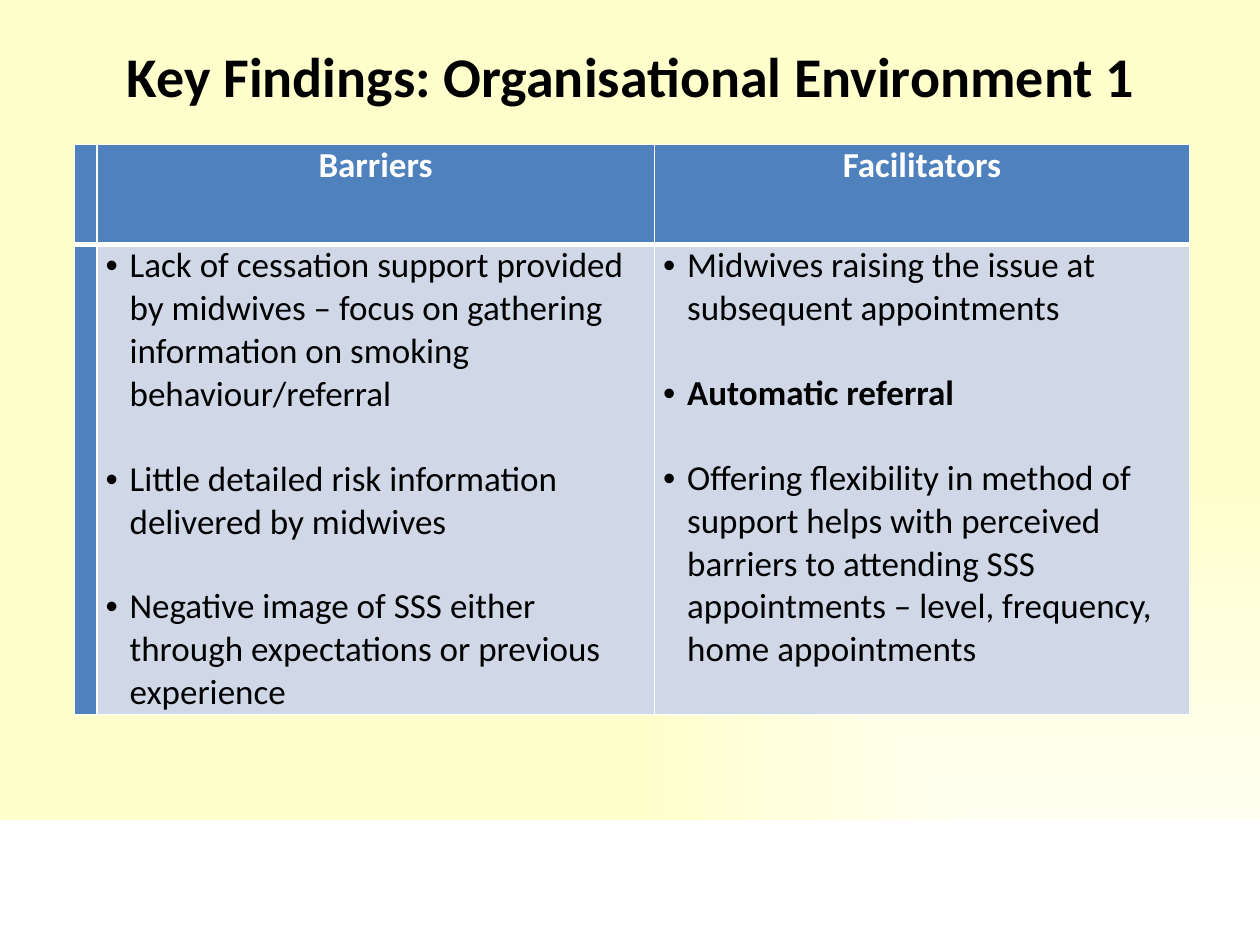
import lxml.etree
import pptx
import pptx.dml.color
import pptx.enum.text
import pptx.oxml
import pptx.oxml.ns
import pptx.util

RGB = pptx.dml.color.RGBColor
BLACK = RGB(0x00, 0x00, 0x00)
WHITE = RGB(0xFF, 0xFF, 0xFF)
CREAM = RGB(0xFF, 0xFF, 0xCC)
BLUE = RGB(0x4F, 0x81, 0xBD)
PALE_BLUE = RGB(0xD0, 0xD8, 0xE8)

WIDTH, HEIGHT = pptx.util.Inches(10), pptx.util.Inches(7.5)
CENTER = pptx.enum.text.PP_ALIGN.CENTER
NS = pptx.oxml.ns.nsdecls("a", "p")

TITLE_FONT = {"name": "Calibri", "size": pptx.util.Pt(32), "bold": True}
HEAD_FONT = {"name": "Calibri", "size": pptx.util.Pt(20), "bold": True}
BODY_FONT = {"name": "Calibri", "size": pptx.util.Pt(20), "bold": False}
BULLET = {"marL": pptx.util.Inches(0.19), "indent": -pptx.util.Inches(0.19)}
MARGINS = {
    "margin_left": pptx.util.Inches(0.07),
    "margin_right": pptx.util.Inches(0.07),
    "margin_top": 0,
    "margin_bottom": 0,
}

TITLE = "Key Findings: Organisational Environment 1"
COLUMN_SHARES = [0.02, 0.5, 0.48]
ROW_SHARES = [0.175, 0.825]
EMPHASIS = "Automatic referral"
FINDINGS = {
    "Barriers": [
        "Lack of cessation support provided by midwives – focus on gathering "
        "information on smoking behaviour/referral",
        "Little detailed risk information delivered by midwives",
        "Negative image of SSS either through expectations or previous experience",
    ],
    "Facilitators": [
        "Midwives raising the issue at subsequent appointments",
        EMPHASIS,
        "Offering flexibility in method of support helps with perceived barriers "
        "to attending SSS appointments – level, frequency, home appointments",
    ],
}


def share(left, top, width, height):
    return (int(left * WIDTH), int(top * HEIGHT), int(width * WIDTH), int(height * HEIGHT))


def apply(target, values):
    for name, value in values.items():
        setattr(target, name, value)


def write(p, text, font, color):
    r = p.add_run()
    r.text = text
    apply(r.font, font)
    r.font.color.rgb = color


def paint_background(s):
    c_sld = s.background.fill and s._element.cSld
    old = c_sld.find(pptx.oxml.ns.qn("p:bg"))
    if old is not None:
        c_sld.remove(old)
    c_sld.insert(0, pptx.oxml.parse_xml(
        f'<p:bg {NS}><p:bgPr><a:gradFill rotWithShape="0"><a:gsLst>'
        f'<a:gs pos="0"><a:srgbClr val="{WHITE}"/></a:gs>'
        f'<a:gs pos="100000"><a:srgbClr val="{CREAM}"/></a:gs></a:gsLst>'
        '<a:path path="rect"><a:fillToRect l="100000" t="100000"/></a:path>'
        '</a:gradFill><a:effectLst/></p:bgPr></p:bg>'))


def add_footer_band(s, box):
    sp = s.shapes.add_shape(pptx.enum.shapes.MSO_SHAPE.RECTANGLE, *box)
    sp.shadow.inherit = False
    sp.fill.solid()
    sp.fill.fore_color.rgb = WHITE
    sp.line.fill.background()


def add_title(s, box):
    tf = s.shapes.add_textbox(*box).text_frame
    tf.word_wrap = True
    p = tf.paragraphs[0]
    p.alignment = CENTER
    write(p, TITLE, TITLE_FONT, BLACK)


def style_cell(cell, color, is_header):
    apply(cell, MARGINS)
    tc_pr = cell._tc.get_or_add_tcPr()
    edges = {"lnL": 1, "lnR": 1, "lnT": 1 if is_header else 3, "lnB": 3 if is_header else 1}
    for tag, points in edges.items():
        tc_pr.append(pptx.oxml.parse_xml(
            f'<a:{tag} {NS} w="{pptx.util.Pt(points)}"><a:solidFill>'
            f'<a:srgbClr val="{WHITE}"/></a:solidFill></a:{tag}>'))
    cell.fill.solid()
    cell.fill.fore_color.rgb = color


def write_bullets(tf, items):
    for i, item in enumerate(items):
        p = tf.add_paragraph() if i else tf.paragraphs[0]
        p_pr = p._p.get_or_add_pPr()
        for name, value in BULLET.items():
            p_pr.set(name, str(int(value)))
        lxml.etree.SubElement(p_pr, pptx.oxml.ns.qn("a:buFont")).set("typeface", "Arial")
        lxml.etree.SubElement(p_pr, pptx.oxml.ns.qn("a:buChar")).set("char", "•")
        if i:
            p.space_before = pptx.util.Pt(24)
        write(p, item, {**BODY_FONT, "bold": item == EMPHASIS}, BLACK)


def add_findings_table(s, box):
    table = s.shapes.add_table(len(ROW_SHARES), len(COLUMN_SHARES), *box).table
    for column, part in zip(table.columns, COLUMN_SHARES):
        column.width = int(box[2] * part)
    for row, part in zip(table.rows, ROW_SHARES):
        row.height = int(box[3] * part)
    for i, row in enumerate(table.rows):
        for j, cell in enumerate(row.cells):
            style_cell(cell, PALE_BLUE if i and j else BLUE, i == 0)
    for j, (heading, items) in enumerate(FINDINGS.items(), 1):
        p = table.cell(0, j).text_frame.paragraphs[0]
        p.alignment = CENTER
        write(p, heading, HEAD_FONT, WHITE)
        write_bullets(table.cell(1, j).text_frame, items)


def main():
    prs = pptx.Presentation()
    prs.slide_width, prs.slide_height = WIDTH, HEIGHT
    s = prs.slides.add_slide(prs.slide_layouts[6])
    paint_background(s)
    add_footer_band(s, share(0, 0.868, 1, 0.132))
    add_title(s, share(0.051, 0.037, 0.9, 0.755))
    add_findings_table(s, share(0.059, 0.153, 0.885, 0.603))
    prs.save("out.pptx")


if __name__ == "__main__":
    main()
